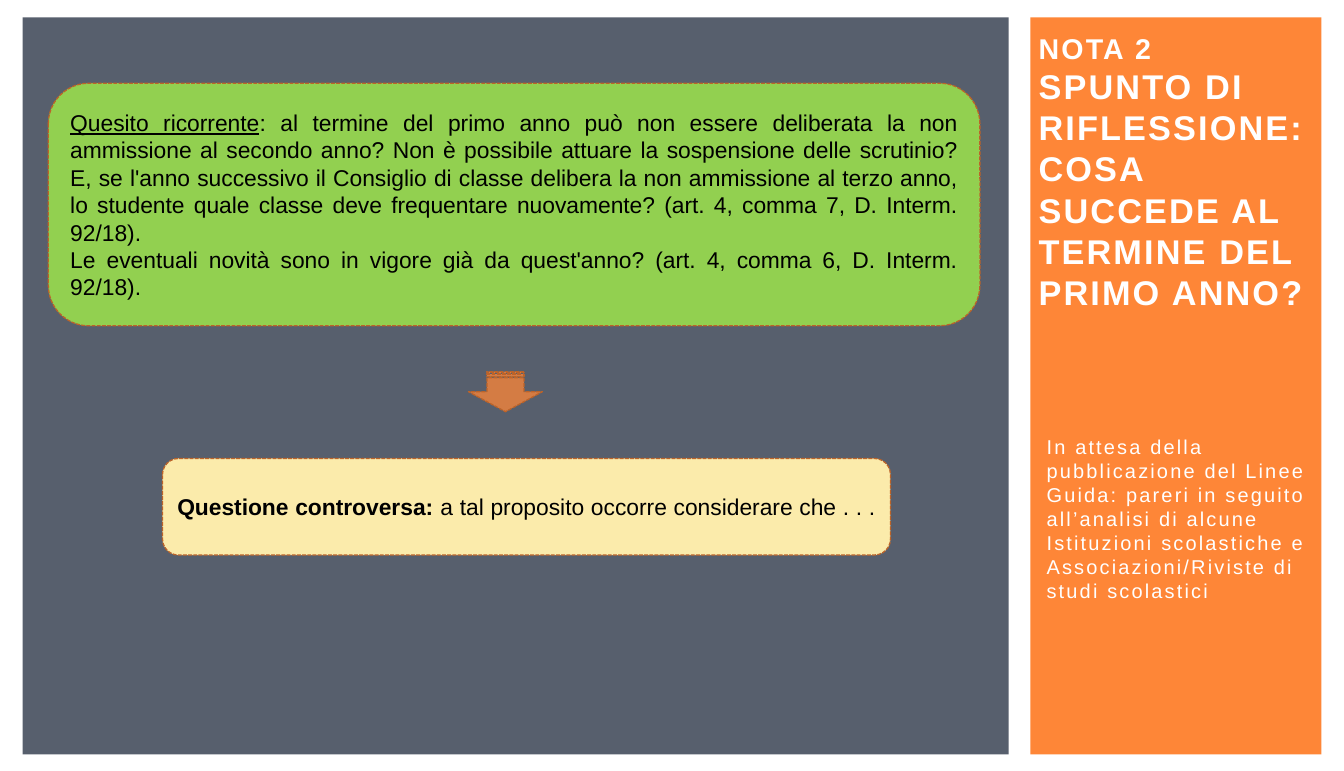
from dataclasses import dataclass

from pptx import Presentation
from pptx.dml.color import RGBColor
from pptx.enum.dml import MSO_LINE
from pptx.enum.shapes import MSO_SHAPE
from pptx.enum.text import MSO_ANCHOR, MSO_AUTO_SIZE, PP_ALIGN
from pptx.oxml.ns import qn
from pptx.util import Inches, Pt
from lxml.etree import SubElement


@dataclass
class Run:
    text: str
    bold: bool = False
    underline: bool = False
    size: float | None = None


@dataclass
class Block:
    kind: MSO_SHAPE
    box: tuple[float, float, float, float]
    fill: str
    outlined: bool = True
    paragraphs: tuple[tuple[Run, ...], ...] = ()
    rotation: float = 0
    opacity: int = 100


PANELS = [
    Block(MSO_SHAPE.RECTANGLE, (10.02, 0.17, 2.83, 7.17), "FE8637", outlined=False),
    Block(MSO_SHAPE.RECTANGLE, (0.22, 0.17, 9.59, 7.17), "575F6D", outlined=False),
]

TITLE = (
    Run("NOTA 2\v", size=20),
    Run("SPUNTO DI RIFLESSIONE: COSA SUCCEDE AL TERMINE DEL PRIMO ANNO?", size=24),
)

SIDE_NOTE = (
    Run("In attesa della pubblicazione del Linee Guida: pareri in seguito "
        "all’analisi di alcune Istituzioni scolastiche e "
        "Associazioni/Riviste di studi scolastici"),
)

FLOW = [
    Block(MSO_SHAPE.ROUNDED_RECTANGLE, (0.47, 0.81, 9.06, 2.36), "92D050", paragraphs=(
        (Run("Quesito ricorrente", underline=True),
         Run(": al termine del primo anno può non essere deliberata la non ammissione "
             "al secondo anno? Non è possibile attuare la sospensione delle scrutinio? "
             "E, se l'anno successivo il Consiglio di classe delibera la non ammissione "
             "al terzo anno, lo studente quale classe deve frequentare nuovamente? "
             "(art. 4, comma 7, D. Interm. 92/18). ")),
        (Run("Le eventuali novità sono in vigore già da quest'anno? "
             "(art. 4, comma 6, D. Interm. 92/18)."),),
    )),
    Block(MSO_SHAPE.ROUNDED_RECTANGLE, (1.58, 4.46, 7.08, 0.94), "FBEBAB", paragraphs=(
        (Run("Questione controversa: ", bold=True),
         Run("a tal proposito occorre considerare che . . . ")),
    )),
    Block(MSO_SHAPE.STRIPED_RIGHT_ARROW, (4.72, 3.45, 0.39, 0.72), "FE8637",
          rotation=90, opacity=75),
]


def rgb(value: str) -> RGBColor:
    return RGBColor.from_string(value)


def place(sp, box: tuple[float, float, float, float]) -> None:
    sp.left, sp.top, sp.width, sp.height = map(Inches, box)


def write(p, runs: tuple[Run, ...], size: float, color: str,
          align: PP_ALIGN, spacing: float = 0) -> None:
    p.alignment = align
    p.font.name = "Arial"
    p.font.size = Pt(size)
    p.font.color.rgb = rgb(color)
    for run in runs:
        r = p.add_run()
        r.text = run.text.rstrip("\v")
        if run.text.endswith("\v"):
            p.add_line_break()
        if run.bold:
            r.font.bold = True
        if run.underline:
            r.font.underline = True
        if run.size:
            r.font.size = Pt(run.size)
        if spacing:
            r._r.get_or_add_rPr().set("spc", str(round(spacing * 100)))


def setup_frame(tf) -> None:
    tf.word_wrap = True
    tf.auto_size = MSO_AUTO_SIZE.NONE
    tf.vertical_anchor = MSO_ANCHOR.MIDDLE


def draw(shapes, block: Block) -> None:
    sp = shapes.add_shape(block.kind, *map(Inches, block.box))
    sp.shadow.inherit = False
    sp.rotation = block.rotation
    sp.fill.solid()
    sp.fill.fore_color.rgb = rgb(block.fill)
    if block.opacity < 100:
        color = sp._element.spPr.find(qn("a:solidFill"))[0]
        SubElement(color, qn("a:alpha")).set("val", str(block.opacity * 1000))
    if block.outlined:
        sp.line.color.rgb = rgb("BC6329")
        sp.line.width = Pt(0.9)
        sp.line.dash_style = MSO_LINE.SQUARE_DOT
    else:
        sp.line.fill.background()
    tf = sp.text_frame
    setup_frame(tf)
    for i, runs in enumerate(block.paragraphs):
        p = tf.add_paragraph() if i else tf.paragraphs[0]
        write(p, runs, 16, "000000", PP_ALIGN.JUSTIFY)


def main() -> None:
    prs = Presentation()
    prs.slide_width, prs.slide_height = Inches(13.07), Inches(7.5)
    s = prs.slides.add_slide(prs.slide_layouts[5])

    # Background panels
    for panel in PANELS:
        draw(s.shapes, panel)

    # Title, brought in front of the panels
    title = s.shapes.title
    s.shapes._spTree.append(title._element)
    place(title, (10, 0.29, 3.07, 2.76))
    setup_frame(title.text_frame)
    p = title.text_frame.paragraphs[0]
    write(p, TITLE, 24, "FFFFFF", PP_ALIGN.LEFT, spacing=1.5)
    p.font.bold = True

    # Side note
    note = s.shapes.add_textbox(*map(Inches, (10.08, 2.88, 2.83, 4.33)))
    setup_frame(note.text_frame)
    write(note.text_frame.paragraphs[0], SIDE_NOTE, 14, "FFFFFF", PP_ALIGN.LEFT, spacing=1.5)

    # Question, answer and the arrow between them
    for block in FLOW:
        draw(s.shapes, block)

    prs.save("out.pptx")


if __name__ == "__main__":
    main()
